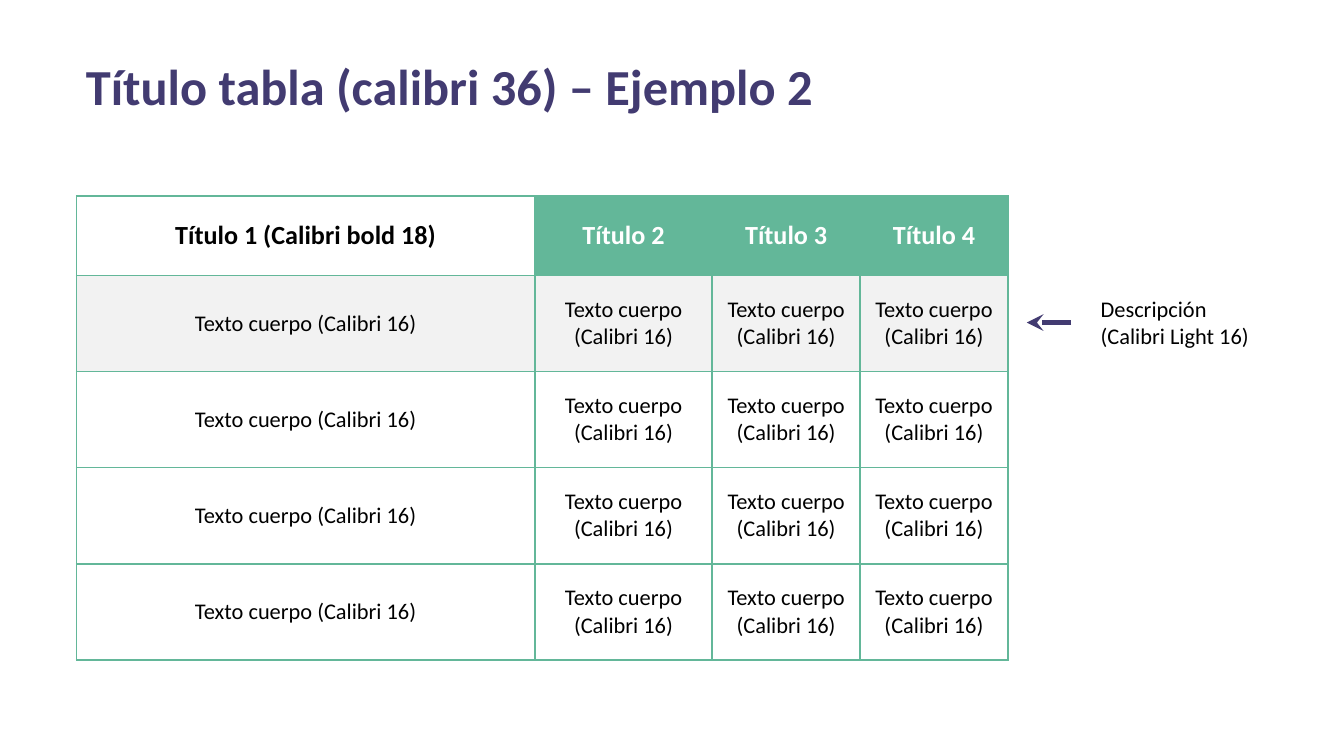
from dataclasses import dataclass

from lxml.etree import SubElement
from pptx import Presentation
from pptx.dml.color import RGBColor
from pptx.enum.shapes import MSO_CONNECTOR
from pptx.enum.text import MSO_ANCHOR, PP_ALIGN
from pptx.oxml.ns import qn
from pptx.util import Inches, Pt


@dataclass(frozen=True)
class Theme:
    """Colours, font and type sizes of the slide."""
    font: str = "Calibri"
    purple: str = "423B71"
    green: str = "63B799"
    grey: str = "F2F2F2"
    black: str = "000000"
    white: str = "FFFFFF"
    title: int = 27
    header: int = 14
    body: int = 12
    border: int = 1
    arrow: int = 3


THEME = Theme()
HEADERS = ["Título 1 (Calibri bold 18)", "Título 2", "Título 3", "Título 4"]
BODY = "Texto cuerpo (Calibri 16)"
COL_WIDTHS = [3.41, 1.32, 1.1, 1.1]
BODY_ROWS = 4
ROW_HEIGHTS = [0.59] + [2.86 / BODY_ROWS] * BODY_ROWS


def style_text(tf, size, color, bold=False, align=PP_ALIGN.LEFT):
    """Format every run of a text frame."""
    for p in tf.paragraphs:
        p.alignment = align
        for r in p.runs:
            r.font.name = THEME.font
            r.font.size = Pt(size)
            r.font.bold = bold
            r.font.color.rgb = RGBColor.from_string(color)


def add_text(s, box, text, size, color, bold=False):
    """Add a wrapping text box."""
    tf = s.shapes.add_textbox(*map(Inches, box)).text_frame
    tf.word_wrap = True
    tf.margin_left = tf.margin_right = Inches(0.07)
    tf.margin_top = tf.margin_bottom = Inches(0.04)
    tf.text = text
    style_text(tf, size, color, bold)


def set_borders(cell):
    """Draw a thin line on all four sides of a cell."""
    pr = cell._tc.get_or_add_tcPr()
    for i, side in enumerate(("a:lnL", "a:lnR", "a:lnT", "a:lnB")):
        ln = pr.makeelement(qn(side), {"w": str(Pt(THEME.border))})
        fill = SubElement(ln, qn("a:solidFill"))
        SubElement(fill, qn("a:srgbClr"), val=THEME.green)
        pr.insert(i, ln)


def fill_cell(cell, text, size, color, bold, fill):
    """Set the text, fill and borders of one table cell."""
    cell.text = text
    cell.vertical_anchor = MSO_ANCHOR.MIDDLE
    cell.margin_left = cell.margin_right = Inches(0.08)
    cell.margin_top = cell.margin_bottom = Inches(0.04)
    style_text(cell.text_frame, size, color, bold, PP_ALIGN.CENTER)
    if fill:
        cell.fill.solid()
        cell.fill.fore_color.rgb = RGBColor.from_string(fill)
    else:
        cell.fill.background()
    set_borders(cell)


def add_grid(s, left, top):
    """Add the table with its header row and highlighted first body row."""
    size = (sum(COL_WIDTHS), sum(ROW_HEIGHTS))
    table = s.shapes.add_table(len(ROW_HEIGHTS), len(COL_WIDTHS),
                               *map(Inches, (left, top, *size))).table
    for col, width in zip(table.columns, COL_WIDTHS):
        col.width = Inches(width)
    for i, height in enumerate(ROW_HEIGHTS):
        table.rows[i].height = Inches(height)
        for j, header in enumerate(HEADERS):
            cell = table.cell(i, j)
            if i == 0:
                color, fill = (THEME.white, THEME.green) if j else (THEME.black, None)
                fill_cell(cell, header, THEME.header, color, True, fill)
            else:
                fill = THEME.grey if i == 1 else None
                fill_cell(cell, BODY, THEME.body, THEME.black, False, fill)


def add_arrow(s, x1, x2, y):
    """Add a horizontal arrow from x1 to x2."""
    line = s.shapes.add_connector(MSO_CONNECTOR.STRAIGHT, *map(Inches, (x1, y, x2, y)))
    line.line.width = Pt(THEME.arrow)
    line.line.color.rgb = RGBColor.from_string(THEME.purple)
    SubElement(line.line._get_or_add_ln(), qn("a:tailEnd"), type="stealth")
    SubElement(line._element.spPr, qn("a:effectLst"))


def main():
    """Build and save the slide."""
    prs = Presentation()
    prs.slide_width = Inches(10)
    prs.slide_height = prs.slide_width * 9 // 16
    s = prs.slides.add_slide(prs.slide_layouts[6])
    add_text(s, (0.57, 0.37, 5.76, 0.53), "Título tabla (calibri 36) – Ejemplo 2",
             THEME.title, THEME.purple, bold=True)
    add_grid(s, 0.57, 1.46)
    add_text(s, (8.12, 2.16, 1.76, 0.48), "Descripción\n(Calibri Light 16)",
             THEME.body, THEME.black)
    add_arrow(s, 7.97, 7.64, 2.4)
    prs.save("out.pptx")


if __name__ == "__main__":
    main()
